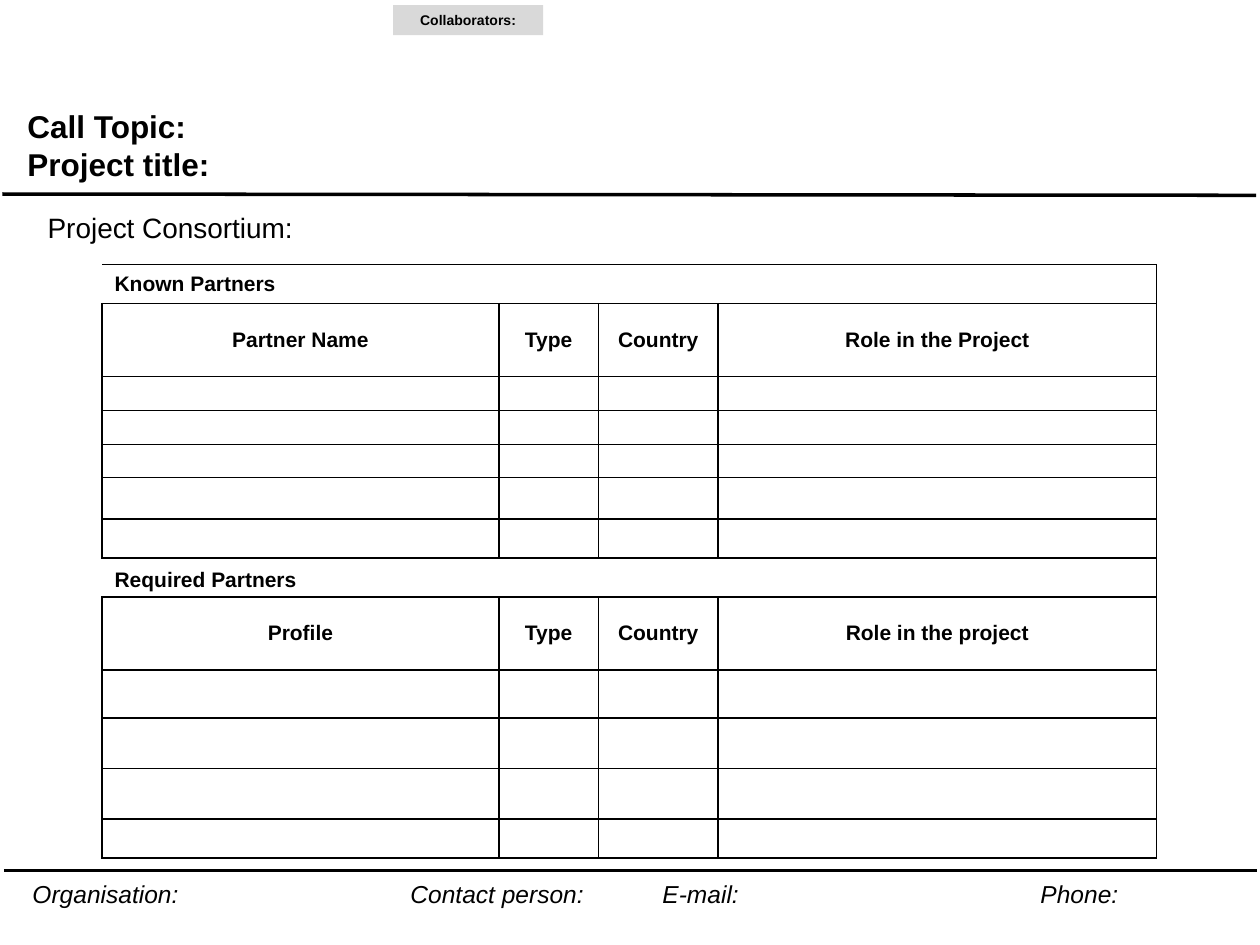
"""Build a project consortium slide with a partner table."""
from dataclasses import dataclass, field

from lxml import etree
from pptx import Presentation
from pptx.dml.color import RGBColor
from pptx.enum.shapes import MSO_CONNECTOR, MSO_SHAPE
from pptx.enum.text import MSO_ANCHOR, PP_ALIGN
from pptx.oxml.ns import qn
from pptx.util import Inches, Pt

LINE = MSO_CONNECTOR.STRAIGHT
RECT = MSO_SHAPE.RECTANGLE
TOP, MID, LOW = MSO_ANCHOR.TOP, MSO_ANCHOR.MIDDLE, MSO_ANCHOR.BOTTOM
LEFT, CENTER = PP_ALIGN.LEFT, PP_ALIGN.CENTER
BLACK, GREY = "000000", "D9D9D9"


@dataclass
class Label:
    text: str
    box: tuple
    style: dict
    anchor: object = TOP
    align: object = LEFT
    fill: str = ""
    tabs: tuple = ()


@dataclass
class Part:
    title: str
    heads: tuple
    rows: tuple
    anchor: object = field(default=MID)


LABELS = (
    Label("Collaborators:", (3.12, 0.04, 1.19, 0.24), {"size": Pt(8), "bold": True},
          MID, CENTER, GREY),
    Label("Project Consortium:", (0.28, 1.62, 9.45, 0.55), {"size": Pt(16)}),
    Label("Organisation:\tContact person:\tE-mail:\tPhone:", (0.16, 6.93, 9.7, 0.57),
          {"size": Pt(14), "italic": True}, tabs=(3, 5, 8)),
    Label("Call Topic:\vProject title:", (0.12, 0.68, 9.06, 0.94),
          {"size": Pt(18), "bold": True}, MID),
)
RULES = ((0.02, 1.54, 9.97, 1.55), (0.03, 6.91, 9.98, 6.91))
COLS = (3.15, 0.79, 0.95, 3.48)
PARTS = (
    Part("Known Partners", ("Partner Name", "Type", "Country", "Role in the Project"),
         (0.27, 0.27, 0.26, 0.33, 0.31)),
    Part("Required Partners", ("Profile", "Type", "Country", "Role in the project"),
         (0.38, 0.4, 0.4, 0.31), LOW),
)
HEAD = {"size": Pt(12), "bold": True}


def color(code: str) -> RGBColor:
    """Turn a hex string into a colour."""
    return RGBColor.from_string(code)


def write(frame, text: str, style: dict, align=LEFT) -> None:
    """Write one styled paragraph."""
    para = frame.paragraphs[0]
    para.text = text
    para.alignment = align
    for run in para.runs:
        run.font.color.rgb = color(BLACK)
        for name, value in {"name": "Arial", **style}.items():
            setattr(run.font, name, value)


def add_label(slide, label: Label) -> None:
    """Draw a text box, or a filled box if the label has a fill."""
    box = tuple(Inches(n) for n in label.box)
    if label.fill:
        shape = slide.shapes.add_shape(RECT, *box)
        shape.shadow.inherit = False
        shape.fill.solid()
        shape.fill.fore_color.rgb = color(label.fill)
        shape.line.fill.background()
    else:
        shape = slide.shapes.add_textbox(*box)
    frame = shape.text_frame
    frame.word_wrap = True
    frame.vertical_anchor = label.anchor
    if label.tabs:
        props = frame.paragraphs[0]._p.get_or_add_pPr()
        stops = etree.SubElement(props, qn("a:tabLst"))
        for stop in label.tabs:
            etree.SubElement(stops, qn("a:tab"), pos=str(Inches(stop)), algn="l")
    write(frame, label.text, label.style, label.align)


def add_rule(slide, ends: tuple) -> None:
    """Draw a thick black rule."""
    rule = slide.shapes.add_connector(LINE, *(Inches(n) for n in ends))
    rule.line.color.rgb = color(BLACK)
    rule.line.width = Pt(2)
    etree.SubElement(rule._element.spPr, qn("a:effectLst"))


def set_edges(cell, sides: str) -> None:
    """Give a cell black borders on the named sides and none elsewhere."""
    props = cell._tc.get_or_add_tcPr()
    for spot, side in enumerate("LRTB"):
        edge = etree.Element(qn(f"a:ln{side}"), w=str(Pt(1)))
        if side in sides:
            fill = etree.SubElement(edge, qn("a:solidFill"))
            etree.SubElement(fill, qn("a:srgbClr"), val=BLACK)
        else:
            etree.SubElement(edge, qn("a:noFill"))
        props.insert(spot, edge)


def fill_cell(cell, text: str, sides: str, anchor=MID, align=LEFT) -> None:
    """Set the text, fill and borders of one cell."""
    cell.fill.background()
    cell.vertical_anchor = anchor
    cell.margin_top = cell.margin_bottom = Inches(0.04)
    if text:
        write(cell.text_frame, text, HEAD, align)
    else:
        etree.SubElement(cell.text_frame.paragraphs[0]._p, qn("a:endParaRPr"), sz="800")
    set_edges(cell, sides)


def add_grid(slide) -> None:
    """Draw the partner table from its parts."""
    tall = [n for part in PARTS for n in (0.31, 0.58, *part.rows)]
    frame = slide.shapes.add_table(len(tall), len(COLS), Inches(0.81), Inches(2.1),
                                   Inches(sum(COLS)), Inches(sum(tall)))
    grid = frame.table
    grid.first_row = grid.horz_banding = False
    for col, wide in zip(grid.columns, COLS):
        col.width = Inches(wide)
    for row, high in zip(grid.rows, tall):
        row.height = Inches(high)
    last = len(COLS) - 1
    top = 0
    for part in PARTS:
        for col, head in enumerate(part.heads):
            title = "" if col else part.title
            fill_cell(grid.cell(top, col), title, "RTB" if col == last else "TB", part.anchor)
            fill_cell(grid.cell(top + 1, col), head, "LRTB", align=CENTER)
            for row in range(len(part.rows)):
                fill_cell(grid.cell(top + 2 + row, col), "", "LRTB")
        top += 2 + len(part.rows)


def main() -> None:
    """Build and save the slide."""
    deck = Presentation()
    deck.slide_width, deck.slide_height = Inches(10), Inches(7.5)
    slide = deck.slides.add_slide(deck.slide_layouts[6])
    for ends in RULES:
        add_rule(slide, ends)
    add_grid(slide)
    for label in LABELS:
        add_label(slide, label)
    deck.save("out.pptx")


if __name__ == "__main__":
    main()
